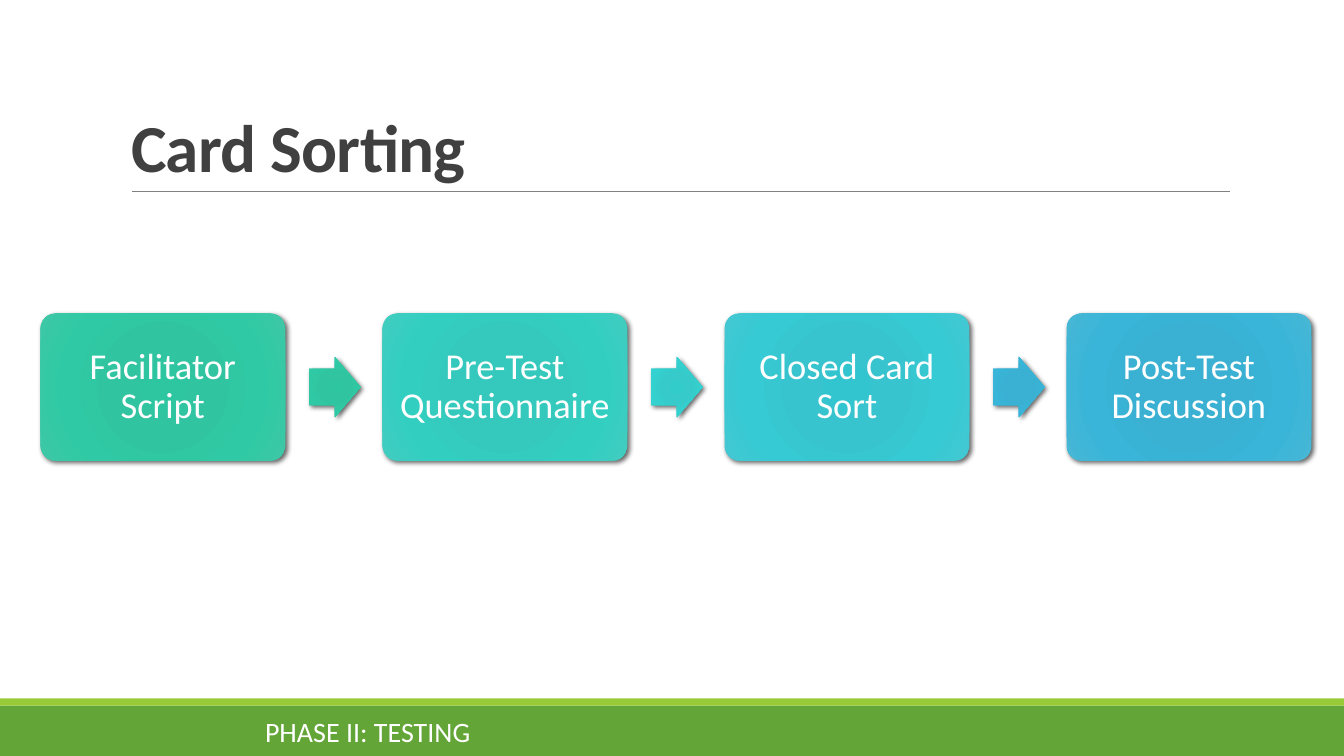
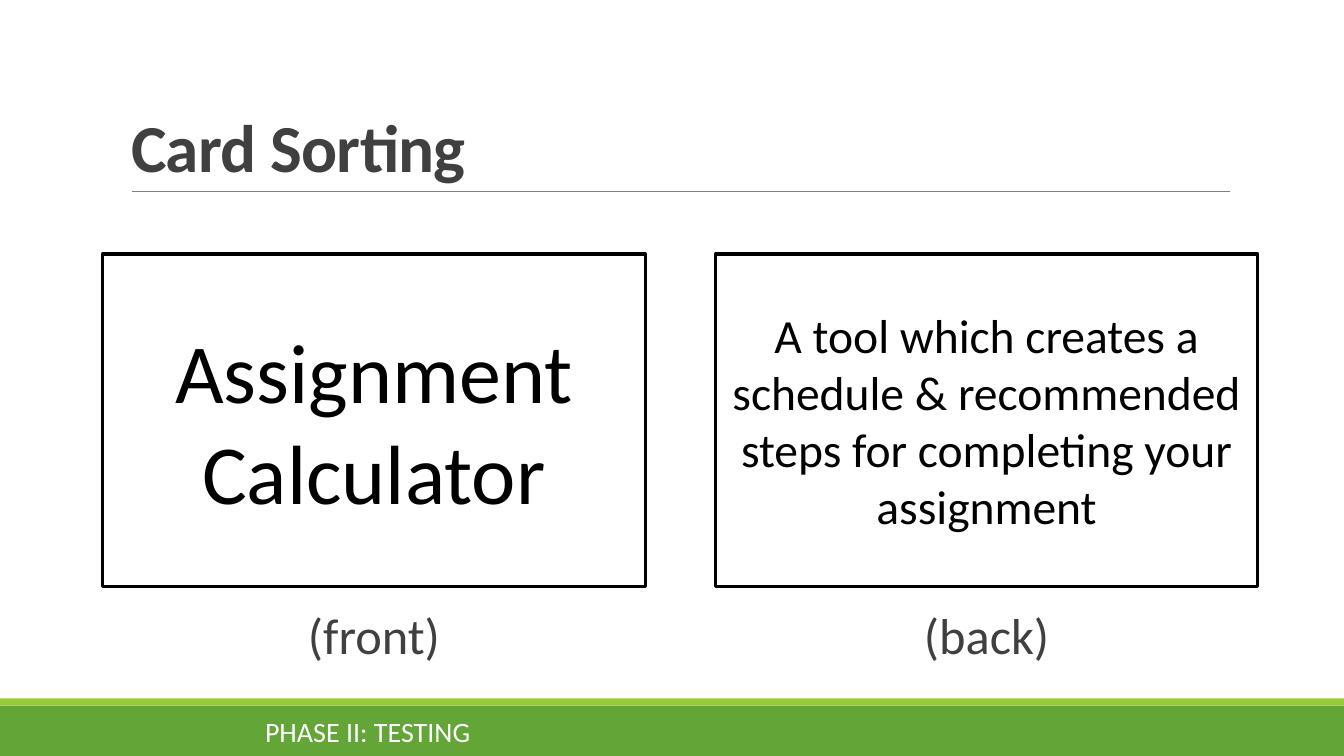
from pptx import Presentation
from pptx.dml.color import RGBColor
from pptx.enum import shapes, text
from pptx.oxml import parse_xml
from pptx.oxml.ns import nsdecls, qn
from pptx.util import Cm, Pt

# Content
TITLE = "Card Sorting"
FOOTER = "PHASE II: TESTING"
STEPS = [("Facilitator Script", "green"), ("Pre-Test Questionnaire", "teal"),
         ("Closed Card Sort", "cyan"), ("Post-Test Discussion", "blue")]
ARROWS = ["green", "aqua", "blue"]
CARDS = [("Assignment Calculator", 60, "(front)"),
         ("A tool which creates a schedule & recommended steps "
          "for completing your assignment", 34, "(back)")]

# Style
FONT = "Calibri"
COLORS = {"band": "63A537", "stripe": "99CB38", "rule": "808080",
          "dark": "404040", "white": "FFFFFF", "black": "000000"}
GRADIENTS = {"green": ["2EC5A1", "31C4A1", "2FCAA5", "3EC7A6"],
             "teal": ["31CABD", "34C9BC", "32CFC1", "41CCC0"],
             "aqua": ["32CCCB", "36CBCA", "33D2D0", "42CFCD"],
             "cyan": ["33C5CF", "37C4CE", "35CAD4", "44C8D1"],
             "blue": ["37B1D3", "3AB1D2", "38B5D8", "48B7D5"]}
STOPS = [0, 34, 70, 100]
WIDTH, HEIGHT = 33.87, 19.05
SHAPE = shapes.MSO_SHAPE
ALIGN = text.PP_ALIGN
ANCHOR = text.MSO_ANCHOR


def rgb(name):
    return RGBColor.from_string(COLORS[name])


def write(sp, words, size, color, align=ALIGN.CENTER, anchor=ANCHOR.MIDDLE,
          bold=False, line=None, inset=None, tracking=None):
    tf = sp.text_frame
    tf.word_wrap = True
    tf.vertical_anchor = anchor
    if inset is not None:
        tf.margin_left = tf.margin_right = Cm(inset)
        tf.margin_top = tf.margin_bottom = Cm(inset)
    p = tf.paragraphs[0]
    p.alignment = align
    if line:
        p.line_spacing = line
    r = p.add_run()
    r.text = words
    r.font.name, r.font.size, r.font.bold = FONT, Pt(size), bold
    r.font.color.rgb = rgb(color)
    if tracking is not None:
        r.font._element.set("spc", str(tracking))


def add_box(s, kind, x, y, w, h, fill=None, outline=None):
    sp = s.shapes.add_shape(kind, Cm(x), Cm(y), Cm(w), Cm(h))
    sp.shadow.inherit = False
    if fill:
        sp.fill.solid()
        sp.fill.fore_color.rgb = rgb(fill)
    else:
        sp.fill.background()
    if outline:
        sp.line.color.rgb = rgb(outline)
        sp.line.width = Pt(2.25)
    else:
        sp.line.fill.background()
    return sp


def add_glossy(s, kind, x, y, w, h, gradient):
    """Shape with a radial gradient and a soft shadow."""
    sp = add_box(s, kind, x, y, w, h)
    stops = "".join(
        f'<a:gs pos="{pos * 1000}"><a:srgbClr val="{color}"/></a:gs>'
        for pos, color in zip(STOPS, GRADIENTS[gradient]))
    fill = parse_xml(
        f'<a:gradFill {nsdecls("a")} rotWithShape="1"><a:gsLst>{stops}</a:gsLst>'
        '<a:path path="circle"><a:fillToRect l="100000" t="100000" '
        'r="100000" b="100000"/></a:path></a:gradFill>')
    spPr = sp.element.spPr
    spPr.replace(spPr.find(qn("a:noFill")), fill)
    spPr.find(qn("a:effectLst")).append(parse_xml(
        f'<a:outerShdw {nsdecls("a")} blurRad="{Pt(3.5)}" dist="{Pt(2)}" '
        'dir="2700000" algn="br" rotWithShape="0"><a:srgbClr val="000000">'
        '<a:alpha val="60000"/></a:srgbClr></a:outerShdw>'))
    return sp


def add_label(s, words, x, y, w, h, size, color, **style):
    sp = s.shapes.add_textbox(Cm(x), Cm(y), Cm(w), Cm(h))
    write(sp, words, size, color, **style)


def add_slide(prs):
    """Slide with the shared bands, title, rule and footer."""
    s = prs.slides.add_slide(prs.slide_layouts[5])
    add_box(s, SHAPE.RECTANGLE, 0, 17.78, WIDTH, 1.27, fill="band")
    add_box(s, SHAPE.RECTANGLE, 0, 17.6, WIDTH, 0.18, fill="stripe")
    rule = s.shapes.add_connector(shapes.MSO_CONNECTOR.STRAIGHT,
                                  Cm(3.33), Cm(4.82), Cm(31), Cm(4.82))
    rule.line.color.rgb = rgb("rule")
    rule.line.width = Pt(0.5)
    rule.element.spPr.append(parse_xml(f'<a:effectLst {nsdecls("a")}/>'))
    title = s.shapes.title
    title.left, title.top = Cm(3.05), Cm(0.79)
    title.width, title.height = Cm(27.94), Cm(4.04)
    write(title, TITLE, 48, "dark", align=ALIGN.LEFT, anchor=ANCHOR.BOTTOM,
          bold=True, line=0.85, tracking=-50)
    add_label(s, FOOTER, 6.43, 17.93, 17.2, 1.02, 20, "white", align=ALIGN.LEFT)
    return s


def add_process(s):
    left, top, w, h, pitch = 1.02, 7.9, 6.17, 3.71, 8.62
    arrow_w, arrow_h = 1.3, 1.52
    for i, (words, gradient) in enumerate(STEPS):
        sp = add_glossy(s, SHAPE.ROUNDED_RECTANGLE,
                        left + i * pitch, top, w, h, gradient)
        sp.adjustments[0] = 0.1
        write(sp, words, 26, "white", line=0.9, inset=0.28)
    for i, gradient in enumerate(ARROWS):
        x = left + i * pitch + w + 0.6
        sp = add_glossy(s, SHAPE.RIGHT_ARROW, x, top + (h - arrow_h) / 2,
                        arrow_w, arrow_h, gradient)
        sp.adjustments[0] = 0.6


def add_cards(s):
    left, top, w, h, pitch = 2.59, 6.4, 13.67, 8.38, 15.44
    for i, (words, size, side) in enumerate(CARDS):
        x = left + i * pitch
        sp = add_box(s, SHAPE.RECTANGLE, x, top, w, h, outline="black")
        write(sp, words, size, "black")
        add_label(s, side, x, top + h + 0.31, w, 1.8, 36, "dark")


def main():
    prs = Presentation()
    prs.slide_width, prs.slide_height = Cm(WIDTH), Cm(HEIGHT)
    add_process(add_slide(prs))
    add_cards(add_slide(prs))
    prs.save("out.pptx")


if __name__ == "__main__":
    main()
